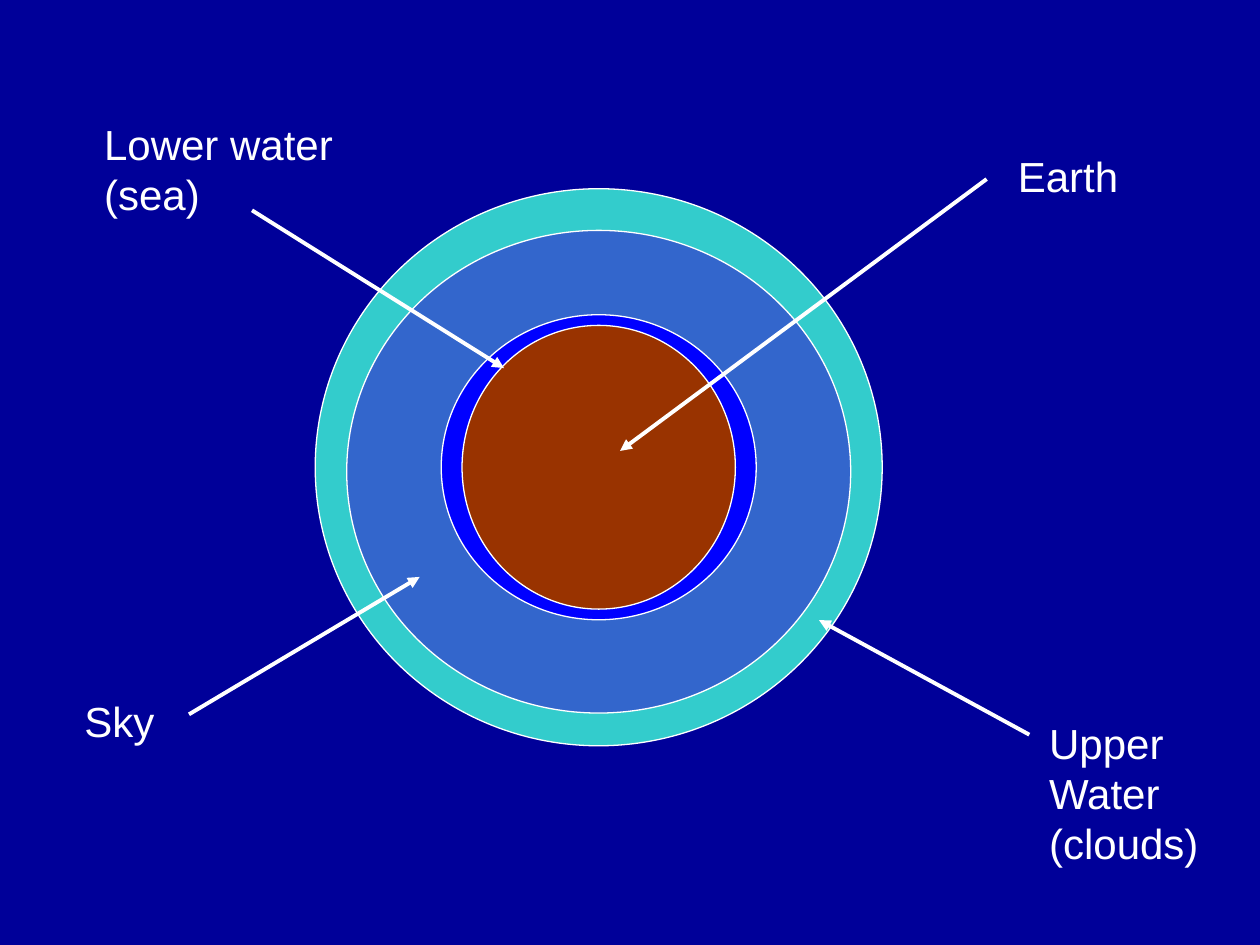
from lxml.etree import SubElement
from pptx import Presentation
from pptx.dml.color import RGBColor
from pptx.enum.shapes import MSO_CONNECTOR as Connector, MSO_SHAPE as Shape
from pptx.enum.text import MSO_AUTO_SIZE as AutoSize
from pptx.oxml.ns import qn
from pptx.util import Cm, Pt

NAVY = RGBColor(0x00, 0x00, 0x99)
WHITE = RGBColor(0xFF, 0xFF, 0xFF)
TURQUOISE = RGBColor(0x33, 0xCC, 0xCC)
SKY_BLUE = RGBColor(0x33, 0x66, 0xCC)
SEA_BLUE = RGBColor(0x00, 0x00, 0xFF)
EARTH_BROWN = RGBColor(0x99, 0x33, 0x00)

CENTER_X = 12.07
SPHERES = [
    {"color": TURQUOISE, "size": (11.43, 11.23), "center_y": 9.42},
    {"color": SKY_BLUE, "size": (10.16, 9.73), "center_y": 9.51},
    {"color": SEA_BLUE, "size": (6.35, 6.15), "center_y": 9.42},
    {"color": EARTH_BROWN, "size": (5.51, 5.72), "center_y": 9.42},
]
LABELS = [
    {"lines": ["Earth"], "box": (20.27, 2.9, 2.54),
     "arrow": (19.89, 3.61, 12.5, 9.09)},
    {"lines": ["Lower water", "(sea)"], "box": (1.85, 2.26, 5.13),
     "arrow": (5.08, 4.24, 10.16, 7.42)},
    {"lines": ["Sky"], "box": (1.45, 13.89, 1.93),
     "arrow": (3.81, 14.4, 8.46, 11.63)},
    {"lines": ["Upper", "Water", "(clouds)"], "box": (20.9, 14.33, 3.53),
     "arrow": (20.75, 14.81, 16.51, 12.5)},
]
LINE_HEIGHT = 1.02
BOX_PADDING = 0.25
LABEL_FONT = {"name": "Arial", "size": Pt(24)}
LABEL_FRAME = {"word_wrap": False, "auto_size": AutoSize.SHAPE_TO_FIT_TEXT}


def apply_format(target, values):
    for name, value in values.items():
        setattr(target, name, value)


def style_line(line, width):
    line.color.rgb = WHITE
    line.width = Pt(width)


def add_sphere(slide, color, size, center_y):
    width, height = size
    left, top = CENTER_X - width / 2, center_y - height / 2
    sphere = slide.shapes.add_shape(
        Shape.OVAL, Cm(left), Cm(top), Cm(width), Cm(height))
    sphere.shadow.inherit = False
    sphere.fill.solid()
    sphere.fill.fore_color.rgb = color
    style_line(sphere.line, 0.75)


def add_arrow(slide, points):
    arrow = slide.shapes.add_connector(Connector.STRAIGHT, *map(Cm, points))
    style_line(arrow.line, 2.25)
    SubElement(arrow.line._get_or_add_ln(), qn("a:tailEnd"), type="triangle")
    SubElement(arrow._element.spPr, qn("a:effectLst"))


def add_label(slide, lines, box):
    height = BOX_PADDING + LINE_HEIGHT * len(lines)
    label = slide.shapes.add_textbox(*map(Cm, (*box, height)))
    frame = label.text_frame
    frame.text = "\n".join(lines)
    apply_format(frame, LABEL_FRAME)
    for paragraph in frame.paragraphs:
        font = paragraph.runs[0].font
        apply_format(font, LABEL_FONT)
        font.color.rgb = WHITE


def main():
    presentation = Presentation()
    apply_format(presentation, {"slide_width": Cm(25.4), "slide_height": Cm(19.05)})
    slide = presentation.slides.add_slide(presentation.slide_layouts[6])
    background = slide.background.fill
    background.solid()
    background.fore_color.rgb = NAVY
    for sphere in SPHERES:
        add_sphere(slide, **sphere)
    for label in LABELS:
        add_arrow(slide, label["arrow"])
        add_label(slide, label["lines"], label["box"])
    presentation.save("out.pptx")


if __name__ == "__main__":
    main()
